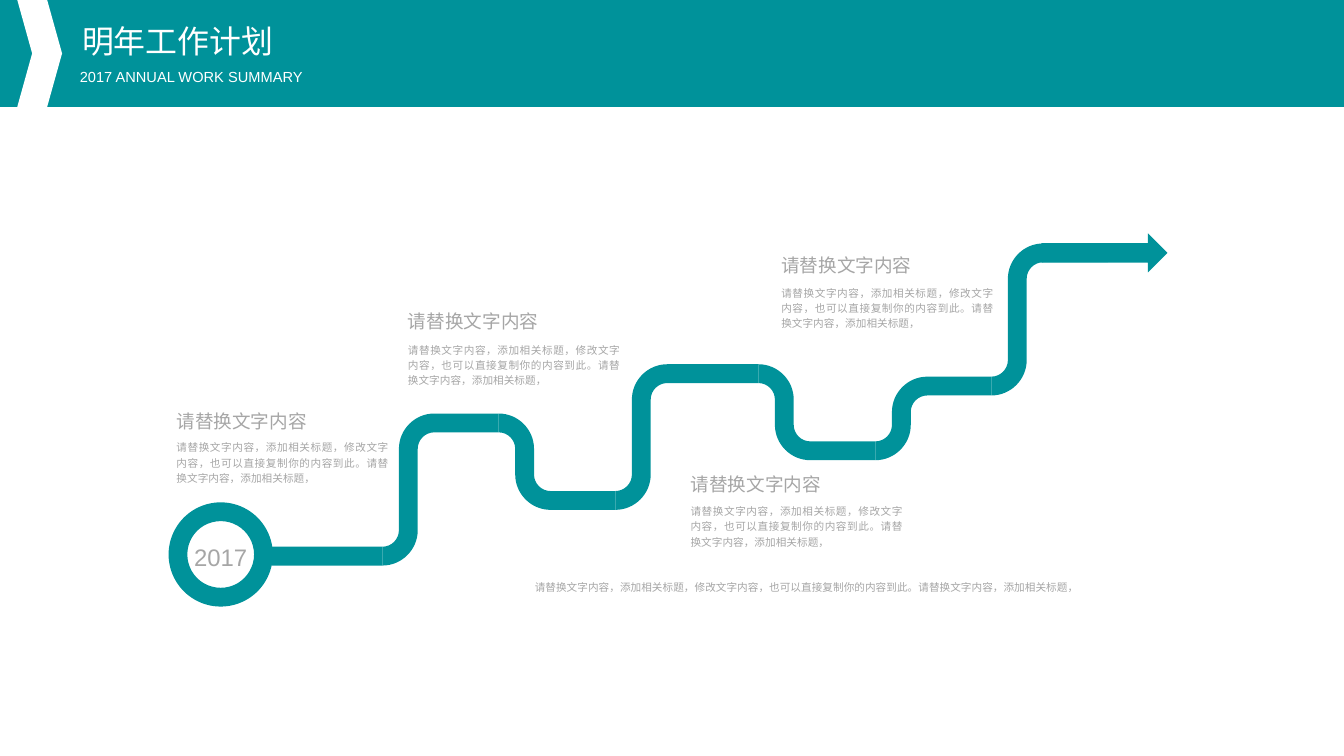
from lxml.etree import SubElement
from pptx import Presentation
from pptx.dml.color import RGBColor
from pptx.enum.shapes import MSO_SHAPE as Shape
from pptx.enum.text import MSO_ANCHOR as Anchor, MSO_AUTO_SIZE as AutoSize, PP_ALIGN as Align
from pptx.oxml.ns import qn
from pptx.util import Cm, Pt

COLORS = {"teal": "00929A", "white": "FFFFFF", "gray": "A6A6A6"}
LATIN, CHINESE = "Arial", "Noto Sans CJK SC"
WIDTH, HEIGHT = 35.71, 20.09
HEADER_HEIGHT = 2.84

# Road: one level per straight stretch, one joint where each stretch ends
ROAD_WIDTH, BEND = 0.5, 0.69
ROUNDNESS = 0.55  # control distance of a quarter circle, as a share of its radius
LEVELS = [14.78, 11.24, 13.3, 9.93, 11.98, 10.26, 6.72]
JOINTS = [10.16, 13.25, 16.35, 20.15, 23.26, 26.34, 29.44]

HEADING = "请替换文字内容"
DETAIL = "请替换文字内容，添加相关标题，修改文字内容，也可以直接复制你的内容到此。请替换文字内容，添加相关标题，"
# Left edge, heading top, detail top
MILESTONES = [(10.84, 8.13, 9.06), (18.35, 12.45, 13.35),
              (20.76, 6.63, 7.55), (4.69, 10.77, 11.66)]


def write_text(box, text, size=8, color="gray", font=LATIN, align=Align.LEFT,
               spacing=1.2, anchor=Anchor.TOP):
    """Fill the box with one formatted paragraph, without margins."""
    frame = box.text_frame
    frame.word_wrap = True
    frame.auto_size = AutoSize.NONE
    frame.vertical_anchor = anchor
    frame.margin_left = frame.margin_right = frame.margin_top = frame.margin_bottom = 0
    para = frame.paragraphs[0]
    para.alignment = align
    para.line_spacing = spacing
    para.space_before = Pt(0)
    span = para.add_run()
    span.text = text
    span.font.size = Pt(size)
    span.font.bold = False
    span.font.name = font
    span.font.color.rgb = RGBColor.from_string(COLORS[color])
    SubElement(span.font._element, qn("a:ea")).set("typeface", CHINESE)
    return para


def road_edge(start, end, before, after, side):
    """Points of one road edge: two bends of four curve points, then the end."""
    turn = 1 if after > before else -1
    half = ROAD_WIDTH / 2 * side
    riser = start + BEND
    edge = []
    for level, ahead, radius in ((before, turn, BEND - half * turn),
                                 (after, -turn, BEND + half * turn)):
        pull = radius * (1 - ROUNDNESS)
        corner_x, corner_y = riser - half * turn, level + half
        if level == before:
            edge += [(corner_x - radius, corner_y), (corner_x - pull, corner_y),
                     (corner_x, corner_y + ahead * pull), (corner_x, corner_y + ahead * radius)]
        else:
            edge += [(corner_x, corner_y + ahead * radius), (corner_x, corner_y + ahead * pull),
                     (corner_x + pull, corner_y), (corner_x + radius, corner_y)]
    return edge + [(end, after + half)]


class Painter:
    """Holds the current slide and its style."""

    def __init__(self, slide):
        self.slide = slide
        self.shapes = slide.shapes

    def paint(self, shape, color):
        shape.shadow.inherit = False
        shape.fill.solid()
        shape.fill.fore_color.rgb = RGBColor.from_string(COLORS[color])
        shape.line.fill.background()

    def shape(self, kind, left, top, width, height, color="teal", adjust=()):
        shape = self.shapes.add_shape(kind, Cm(left), Cm(top), Cm(width), Cm(height))
        for index, value in enumerate(adjust):
            shape.adjustments[index] = value
        self.paint(shape, color)

    def road(self, *stretch):
        outline = road_edge(*stretch, side=1) + road_edge(*stretch, side=-1)[::-1]
        corners = [(Cm(x), Cm(y)) for x, y in outline]
        builder = self.shapes.build_freeform(*corners[0])
        builder.add_line_segments(corners[1:], close=True)
        shape = builder.convert_to_shape()
        self.paint(shape, "teal")
        # Merge the three segments of each bend into one curve
        segments = list(shape._element.iter(qn("a:lnTo")))
        for first in (0, 4, 10, 14):
            curve = segments[first]
            curve.tag = qn("a:cubicBezTo")
            for segment in segments[first + 1:first + 3]:
                curve.append(segment[0])
                segment.getparent().remove(segment)

    def text(self, text, left, top, width, height, **style):
        box = self.shapes.add_textbox(Cm(left), Cm(top), Cm(width), Cm(height))
        write_text(box, text, **style)

    def placeholder(self, index, text, left, top, width, height, **style):
        box = self.slide.placeholders[index]
        box.left, box.top, box.width, box.height = Cm(left), Cm(top), Cm(width), Cm(height)
        para = write_text(box, text, color="white", spacing=0.9, **style)
        settings = para._p.get_or_add_pPr()
        settings.set("marL", "0")
        settings.set("indent", "0")
        SubElement(settings, qn("a:buNone"))
        self.shapes._spTree.append(box._element)  # bring in front of the header


def main():
    deck = Presentation()
    deck.slide_width, deck.slide_height = Cm(WIDTH), Cm(HEIGHT)
    page = Painter(deck.slides.add_slide(deck.slide_layouts[1]))

    # Header
    page.shape(Shape.RECTANGLE, 0, 0, WIDTH, HEADER_HEIGHT)
    page.shape(Shape.CHEVRON, 0.46, 0, 1.19, HEADER_HEIGHT, color="white", adjust=[0.332])

    # Road and arrow
    for stretch in zip(JOINTS, JOINTS[1:], LEVELS, LEVELS[1:]):
        page.road(*stretch)
    page.shape(Shape.RECTANGLE, 7.21, LEVELS[0] - ROAD_WIDTH / 2, 2.95, ROAD_WIDTH)
    page.shape(Shape.RIGHT_ARROW, 27.67, LEVELS[-1] - 0.52, 3.35, 1.04)

    # Starting ring and year
    page.shape(Shape.DONUT, 4.48, 13.35, 2.77, 2.77, adjust=[0.18])
    page.text("2017", 4.71, 14.26, 2.31, 0.91, size=18, align=Align.CENTER)

    # Closing line and milestone texts
    page.text(DETAIL, 14.21, 15.38, 17.17, 0.41, align=Align.JUSTIFY)
    for left, heading_top, detail_top in MILESTONES:
        page.text(HEADING, left, heading_top, 4.85, 0.71, size=14)
        page.text(DETAIL, left, detail_top, 5.64, 1.22, align=Align.JUSTIFY,
                  anchor=Anchor.MIDDLE)

    # Title and subtitle
    page.placeholder(0, "明年工作计划", 2.18, 0.69, 8.76, 0.91, size=24, font=CHINESE)
    page.placeholder(1, "2017 ANNUAL WORK SUMMARY", 2.12, 1.85, 8.84, 0.43, size=11)

    deck.save("out.pptx")


if __name__ == "__main__":
    main()
